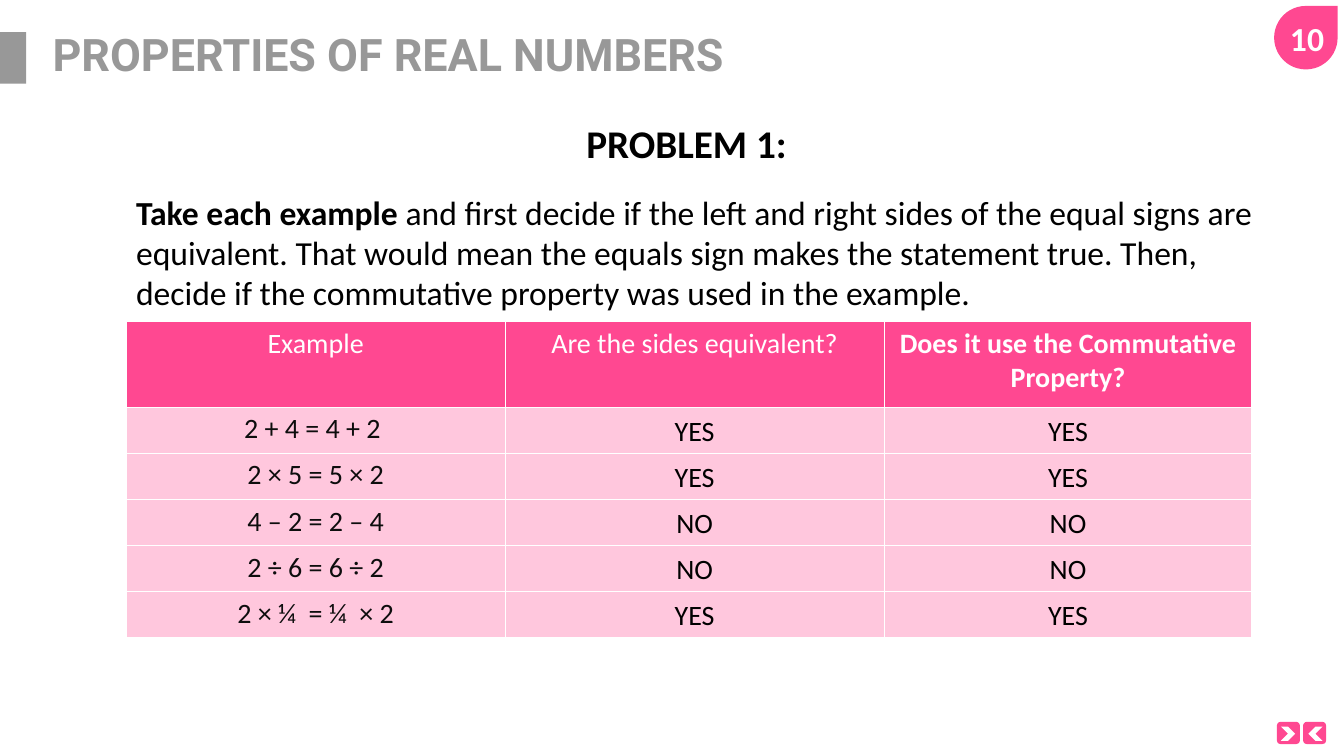
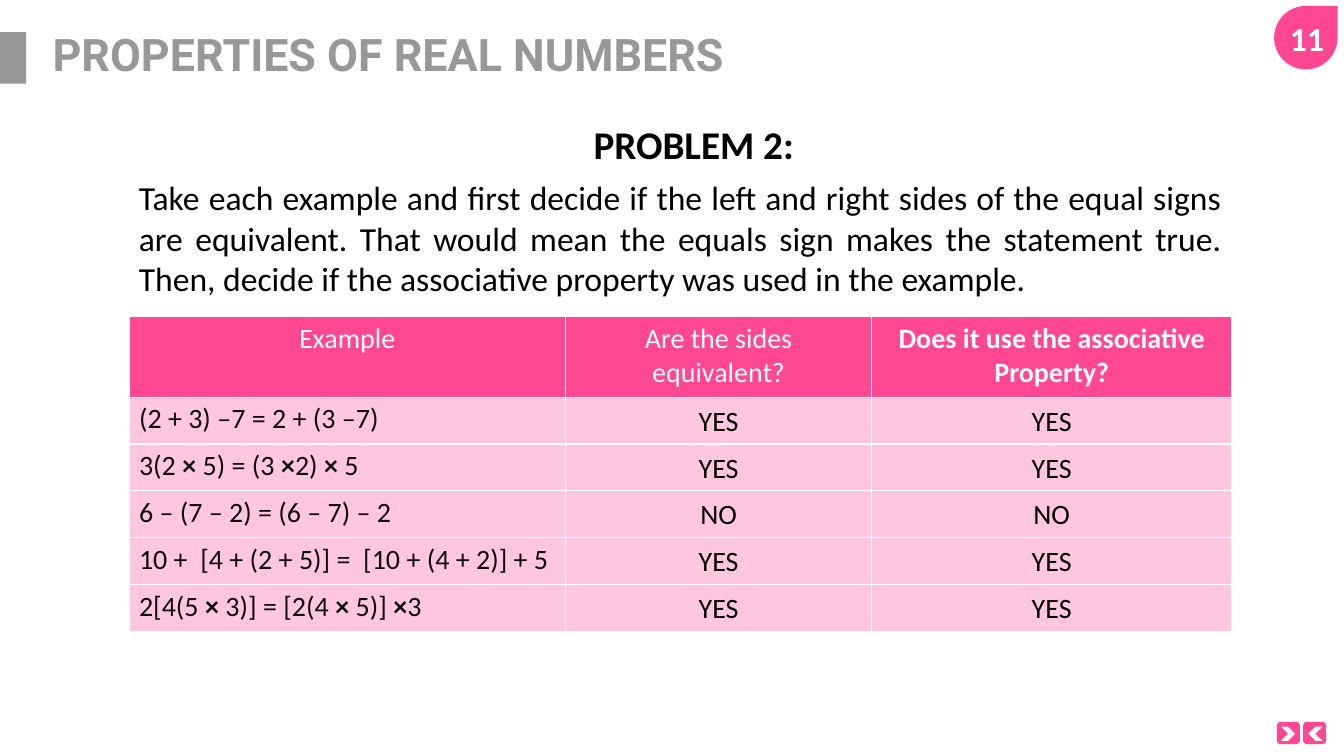
"""Builds two problem slides on the properties of real numbers."""
from lxml import etree
from pptx import Presentation
from pptx.dml.color import RGBColor
from pptx.enum.shapes import MSO_SHAPE
from pptx.enum.text import MSO_ANCHOR, MSO_AUTO_SIZE, PP_ALIGN
from pptx.oxml.ns import qn
from pptx.util import Cm, Pt

LEFT, MID, JUST = PP_ALIGN.LEFT, PP_ALIGN.CENTER, PP_ALIGN.JUSTIFY
RECT, DROP = MSO_SHAPE.RECTANGLE, MSO_SHAPE.TEAR
ROUND, ARROW = MSO_SHAPE.ROUNDED_RECTANGLE, MSO_SHAPE.CHEVRON
HUES = {"pink": "FF4891", "grey": "989898", "white": "FFFFFF",
        "black": "000000", "ink": "0D0D0D"}
DECOR = [
    (RECT, "grey", 0, 0.81, 0.66, 1.3, 0),
    (DROP, "pink", 32.11, 0.15, 1.6, 1.6, 0),
    (ROUND, "pink", 32.18, 18.19, 0.58, 0.56, 0),
    (ROUND, "pink", 32.84, 18.19, 0.58, 0.56, 0),
    (ARROW, "white", 32.28, 18.31, 0.36, 0.36, 0),
    (ARROW, "white", 32.97, 18.31, 0.36, 0.36, 180),
]
TASK = ("and first decide if the left and right sides of the equal signs are "
        "equivalent. That would mean the equals sign makes the statement true. "
        "Then, decide if the {} property was used in the example.")
SLIDES = [
    {"page": "10", "head": "*PROBLEM 1:*", "head_at": (14.53, 2.87),
     "task": "*Take each example *" + TASK.format("commutative"),
     "task_at": (3.18, 4.7, 29.34, 3.33), "align": LEFT,
     "at": (3.18, 8.1), "cols": (9.55, 9.55, 9.27), "rows": (2.16, 1.16),
     "side": MID, "ask": "*Does it use the Commutative Property?*",
     "sums": [("2 + 4 = 4 + 2 ", "YES"), ("2 × 5 = 5 × 2", "YES"),
              ("4 – 2 = 2 – 4", "NO"), ("2 ÷ 6 = 6 ÷ 2", "NO"),
              ("2 × ¼  = ¼  × 2", "YES")]},
    {"page": "11", "head": "*PROBLEM 2:*", "head_at": (14.71, 2.9),
     "task": "Take each example " + TASK.format("associative"),
     "task_at": (3.25, 4.34, 27.79, 4.37), "align": JUST,
     "at": (3.25, 7.98), "cols": (11, 7.72, 9.07), "rows": (2.03, 1.18),
     "side": LEFT, "ask": "*Does it use the associative Property?*",
     "sums": [("(2 + 3) –7 = 2 + (3 –7)", "YES"),
              ("3(2 *× *5) = (3 *×*2) *× *5", "YES"),
              ("6 – (7 – 2) = (6 – 7) – 2", "NO"),
              ("10 +  [4 + (2 + 5)] =  [10 + (4 + 2)] + 5", "YES"),
              ("2[4(5 *× *3)] = [2(4 *× *5)] *×*3", "YES")]},
]


def write(frame, text, size, hue, align=LEFT, face="Calibri"):
    """Write text into a frame, with the parts between asterisks in bold."""
    para = frame.paragraphs[0]
    para.alignment = align
    for spot, part in enumerate(text.split("*")):
        if part:
            run = para.add_run()
            run.text = part
            run.font.name, run.font.size = face, Pt(size)
            run.font.bold = spot % 2 == 1
            run.font.color.rgb = RGBColor.from_string(HUES[hue])
    return para


def paint(cell, alpha):
    """Give a cell white borders and a pink fill of the given opacity."""
    props = cell._tc.get_or_add_tcPr()
    for side in ("lnL", "lnR", "lnT", "lnB"):
        line = etree.SubElement(props, qn("a:" + side), w=str(Pt(1)))
        solid = etree.SubElement(line, qn("a:solidFill"))
        etree.SubElement(solid, qn("a:srgbClr"), val=HUES["white"])
    cell.fill.solid()
    cell.fill.fore_color.rgb = RGBColor.from_string(HUES["pink"])
    if alpha < 100:
        tint = props.find(qn("a:solidFill")).find(qn("a:srgbClr"))
        etree.SubElement(tint, qn("a:alpha"), val=str(alpha * 1000))


deck = Presentation()
deck.slide_width, deck.slide_height = Cm(33.87), Cm(19.05)

for info in SLIDES:
    slide = deck.slides.add_slide(deck.slide_layouts[5])
    shapes = slide.shapes

    for kind, hue, x, y, w, h, turn in DECOR:
        shape = shapes.add_shape(kind, Cm(x), Cm(y), Cm(w), Cm(h))
        shape.shadow.inherit = False
        shape.fill.solid()
        shape.fill.fore_color.rgb = RGBColor.from_string(HUES[hue])
        shape.line.fill.background()
        shape.rotation = turn

    title = shapes.title
    title.left, title.top = Cm(1.07), Cm(0.89)
    title.width, title.height = Cm(29.21), Cm(1.07)
    frame = title.text_frame
    frame.auto_size = MSO_AUTO_SIZE.NONE
    frame.vertical_anchor = MSO_ANCHOR.MIDDLE
    para = write(frame, "*PROPERTIES OF REAL NUMBERS*", 32, "grey", face="Roboto")
    para.line_spacing = 0.9

    boxes = [
        ((32.26, 0.33, 1.52, 1.27), f"*{info['page']}*", 24, "white", LEFT, True),
        ((*info["head_at"], 5.61, 1.45), info["head"], 28, "black", LEFT, False),
        (info["task_at"], info["task"], 24, "black", info["align"], True),
    ]
    for spot, text, size, hue, align, wrap in boxes:
        frame = shapes.add_textbox(*map(Cm, spot)).text_frame
        frame.word_wrap = wrap
        write(frame, text, size, hue, align)

    heads = ("Example", "Are the sides equivalent?", info["ask"])
    grid = [heads] + [(task, reply, reply) for task, reply in info["sums"]]
    top, step = info["rows"]
    high = top + step * len(info["sums"])
    table = shapes.add_table(len(grid), len(heads), *map(Cm, info["at"]),
                             Cm(sum(info["cols"])), Cm(high)).table
    table.first_row = table.horz_banding = False
    for col, wide in zip(table.columns, info["cols"]):
        col.width = Cm(wide)
    for r, texts in enumerate(grid):
        table.rows[r].height = Cm(step if r else top)
        for c, text in enumerate(texts):
            cell = table.cell(r, c)
            paint(cell, 30 if r else 100)
            hue = "white" if r == 0 else "black" if c else "ink"
            align = info["side"] if r and c == 0 else MID
            para = write(cell.text_frame, text, 20, hue, align)
            if r and c:
                para.line_spacing = 1.07

deck.save("out.pptx")
